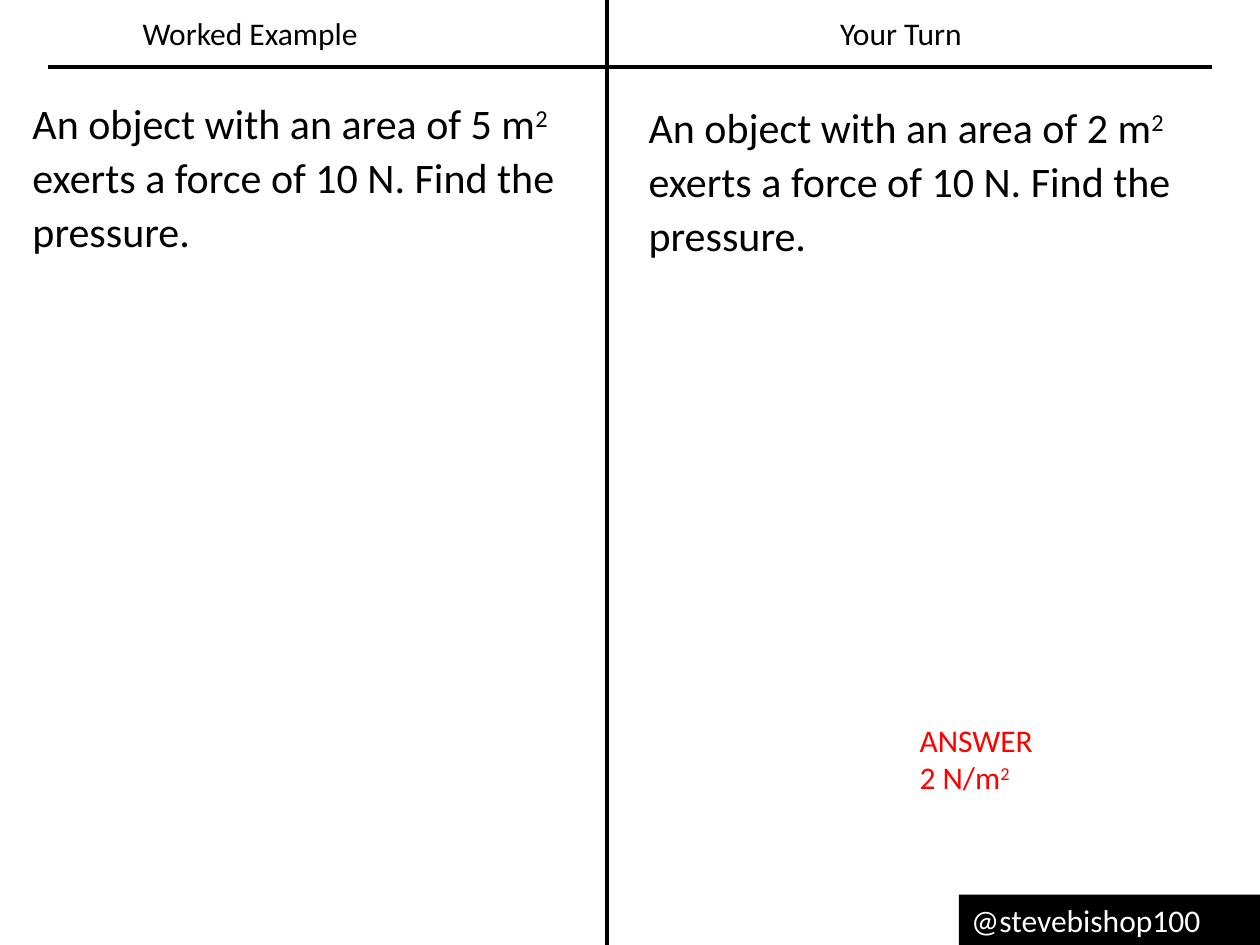
from dataclasses import dataclass
from lxml.etree import SubElement
from pptx import Presentation
from pptx.dml.color import RGBColor as RGB
from pptx.enum.shapes import MSO_CONNECTOR as CONN
from pptx.enum.text import MSO_AUTO_SIZE as FIT, PP_ALIGN as ALIGN
from pptx.oxml.ns import qn
from pptx.util import Pt


@dataclass(frozen=True)
class Theme:
    font: str = "Calibri"
    ink: RGB = RGB(0, 0, 0)
    paper: RGB = RGB(255, 255, 255)
    answer: RGB = RGB(255, 0, 0)
    body: int = 18
    question: int = 24
    rule: float = 2.5


theme = Theme()


def add_text(s, text, box, size=theme.body, color=theme.ink, fill=None,
             align=ALIGN.LEFT, line_spacing=None, space_after=None):
    sp = s.shapes.add_textbox(*[Pt(v) for v in box])
    if fill is not None:
        sp.fill.solid()
        sp.fill.fore_color.rgb = fill
    tf = sp.text_frame
    tf.word_wrap = True
    tf.auto_size = FIT.SHAPE_TO_FIT_TEXT
    for i, line in enumerate(text.split("\n")):
        p = tf.add_paragraph() if i else tf.paragraphs[0]
        p.alignment = align
        if line_spacing:
            p.line_spacing = line_spacing
        if space_after:
            p.space_after = Pt(space_after)
        for j, part in enumerate(line.split("^")):
            if not part:
                continue
            r = p.add_run()
            r.text = part
            r.font.name = theme.font
            r.font.size = Pt(size)
            r.font.color.rgb = color
            if j % 2:
                r._r.get_or_add_rPr().set("baseline", "30000")


prs = Presentation()
prs.slide_width, prs.slide_height = Pt(720), Pt(540)
s = prs.slides.add_slide(prs.slide_layouts[6])

for title, left, width in [("Worked Example", 54.72, 176.4), ("Your Turn", 450.72, 128.16)]:
    add_text(s, title, (left, 4.32, width, 28.8), align=ALIGN.CENTER)

for ends in [(347.04, 0, 347.04, 540), (27.36, 38.16, 692.64, 38.16)]:
    rule = s.shapes.add_connector(CONN.STRAIGHT, *[Pt(v) for v in ends])
    rule.line.color.rgb = theme.ink
    rule.line.width = Pt(theme.rule)
    SubElement(rule._element.spPr, qn("a:effectLst"))

add_text(s, "@stevebishop100", (547.92, 511.2, 172.08, 28.8),
         color=theme.paper, fill=theme.ink)

for area, left, top in [(5, 11.52, 50.4), (2, 363.6, 52.56)]:
    add_text(s, f"An object with an area of {area} m^2 ^exerts a force of 10 N. Find the pressure.",
             (left, top, 341.28, 100.08), size=theme.question,
             line_spacing=1.07, space_after=8)

add_text(s, "ANSWER\n2 N/m^2", (518.4, 408.24, 181.44, 72.72), color=theme.answer)

prs.save("out.pptx")
